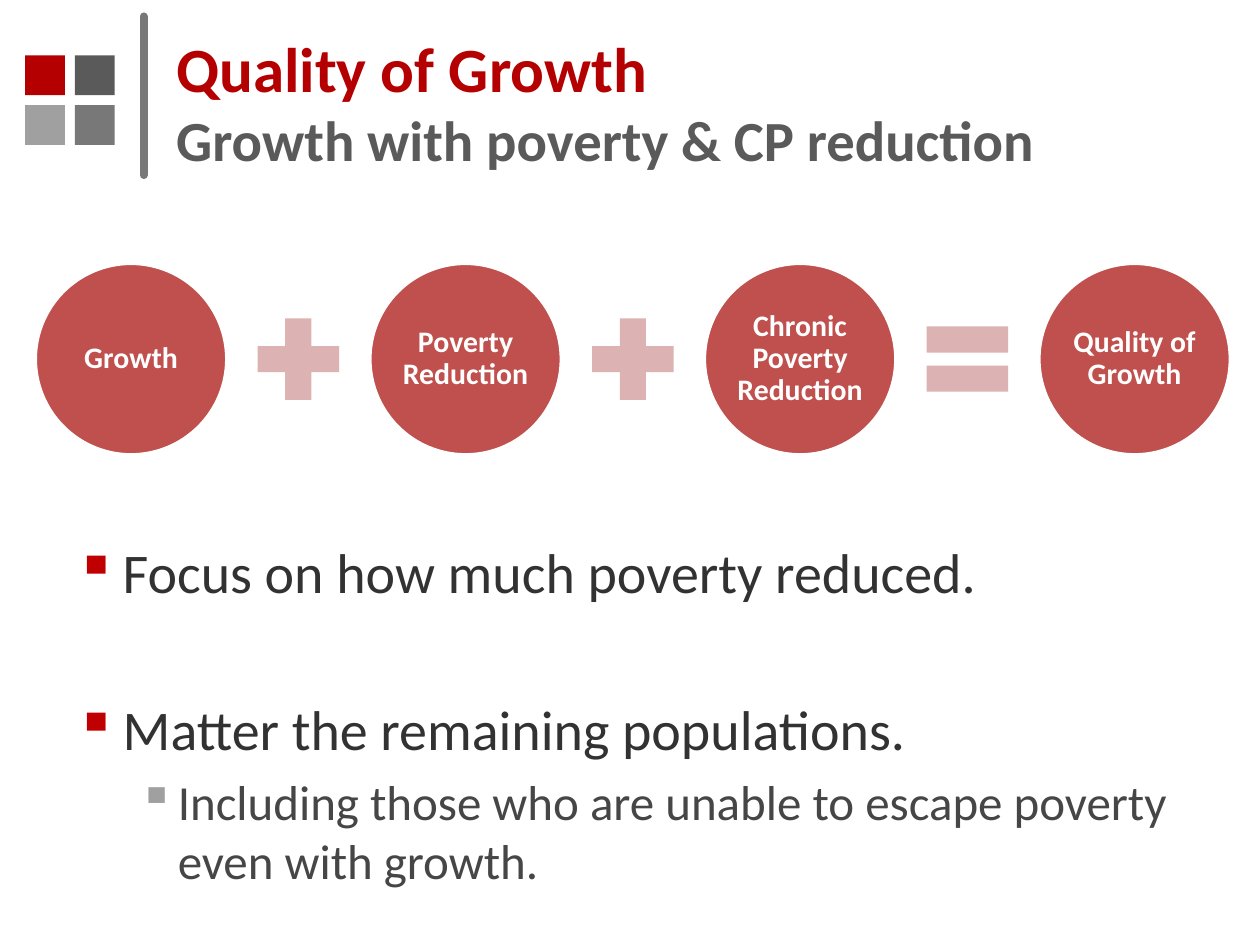
"""Build the Quality of Growth slide on a grid of 100 columns by 75 rows."""
import pptx
import pptx.dml.color
import pptx.enum.shapes
import pptx.enum.text
import pptx.oxml.ns
import pptx.util
import lxml.etree

COLORS = {
    "red": "B40000", "dark": "5A5A5A", "gray": "787878", "light": "A0A0A0",
    "circle": "C0504D", "operator": "DCB3B2", "white": "FFFFFF",
    "bullet": "C00000", "body": "323232", "detail": "464646",
}
SHAPE = pptx.enum.shapes.MSO_SHAPE
MIDDLE = pptx.enum.text.MSO_ANCHOR.MIDDLE
TOP = pptx.enum.text.MSO_ANCHOR.TOP
CENTER = pptx.enum.text.PP_ALIGN.CENTER


class SlideBuilder:
    """Hold the style and the current slide."""

    font = "Calibri"
    columns, rows = 100, 75

    def __init__(self, deck):
        self.column = deck.slide_width / self.columns
        self.row = deck.slide_height / self.rows
        self.page = deck.slides.add_slide(deck.slide_layouts[6])

    def place(self, left, top, width, height):
        return [int(left * self.column), int(top * self.row),
                int(width * self.column), int(height * self.row)]

    def color(self, name):
        return pptx.dml.color.RGBColor.from_string(COLORS[name])

    def shape(self, kind, area, fill, outline=None):
        shape = self.page.shapes.add_shape(kind, *self.place(*area))
        shape.shadow.inherit = False
        shape.fill.solid()
        shape.fill.fore_color.rgb = self.color(fill)
        if outline:
            shape.line.color.rgb = self.color(outline)
            shape.line.width = pptx.util.Pt(2)
        else:
            shape.line.fill.background()
        return shape

    def line(self, start, end, color, width):
        x1, y1, x2, y2 = self.place(*start, *end)
        line = self.page.shapes.add_connector(
            pptx.enum.shapes.MSO_CONNECTOR.STRAIGHT, x1, y1, x2, y2)
        line.line.color.rgb = self.color(color)
        line.line.width = pptx.util.Pt(width)
        line.line._get_or_add_ln().set("cap", "rnd")
        lxml.etree.SubElement(line._element.spPr, pptx.oxml.ns.qn("a:effectLst"))

    def text_box(self, area, anchor):
        box = self.page.shapes.add_textbox(*self.place(*area))
        box.text_frame.word_wrap = True
        box.text_frame.vertical_anchor = anchor
        return box.text_frame

    def span(self, para, text, size, color, bold=False):
        span = para.add_run()
        span.text = text
        span.font.name = self.font
        span.font.size = pptx.util.Pt(size)
        span.font.bold = bold
        span.font.color.rgb = self.color(color)

    def circle(self, area, text):
        frame = self.shape(SHAPE.OVAL, area, "circle", "white").text_frame
        frame.word_wrap = True
        frame.vertical_anchor = MIDDLE
        frame.margin_left = frame.margin_right = pptx.util.Inches(0.02)
        frame.margin_top = frame.margin_bottom = pptx.util.Inches(0.02)
        para = frame.paragraphs[0]
        para.alignment = CENTER
        para.line_spacing = 0.9
        self.span(para, text, 17, "white", True)

    def bullet(self, para, text, size, color, mark, level, margin, indent, before):
        para.level = level
        para.space_before = pptx.util.Pt(before)
        properties = para._p.get_or_add_pPr()
        properties.set("marL", str(int(margin * self.column)))
        properties.set("indent", str(int(-indent * self.column)))
        tint = lxml.etree.SubElement(properties, pptx.oxml.ns.qn("a:buClr"))
        lxml.etree.SubElement(tint, pptx.oxml.ns.qn("a:srgbClr"), val=COLORS[mark])
        lxml.etree.SubElement(properties, pptx.oxml.ns.qn("a:buChar"), char="▪")
        self.span(para, text, size, color)


def main():
    deck = pptx.Presentation()
    deck.slide_width = pptx.util.Inches(10)
    deck.slide_height = pptx.util.Inches(7.5)
    slide = SlideBuilder(deck)

    for index, color in enumerate(["red", "dark", "light", "gray"]):
        row, column = divmod(index, 2)
        slide.shape(SHAPE.RECTANGLE,
                    (2 + 3.95 * column, 4.4 + 3.95 * row, 3.15, 3.15), color)
    slide.line((11.4, 1.3), (11.4, 13.9), "gray", 4.5)

    title = slide.text_box((13, 2.9, 79.6, 10.2), MIDDLE).paragraphs[0]
    slide.span(title, "Quality of Growth", 36, "red", True)
    title.add_line_break()
    slide.span(title, "Growth with poverty & CP reduction", 32.4, "dark", True)

    pitch, diameter, sign, middle = 26.55, 15.2, 8.8, 28.5
    terms = ["Growth", "Poverty Reduction", "Chronic Poverty Reduction",
             "Quality of Growth"]
    signs = [SHAPE.MATH_PLUS, SHAPE.MATH_PLUS, SHAPE.MATH_EQUAL]
    for index, term in enumerate(terms):
        center = 10.4 + pitch * index
        slide.circle((center - diameter / 2, middle - diameter / 2,
                      diameter, diameter), term)
        if index < len(signs):
            slide.shape(signs[index],
                        (center + pitch / 2 - sign / 2, middle - sign / 2, sign, sign),
                        "operator")

    body = slide.text_box((5, 42.2, 90, 29.1), TOP)
    main_style = (32, "body", "bullet", 0, 3.75, 3.75)
    detail_style = (28, "detail", "light", 1, 8.13, 3.13)
    points = [
        ("Focus on how much poverty reduced.", main_style, 0),
        ("Matter the remaining populations.", main_style, 51),
        ("Including those who are unable to escape poverty even with growth.",
         detail_style, 5.6),
    ]
    for index, (text, style, before) in enumerate(points):
        para = body.add_paragraph() if index else body.paragraphs[0]
        slide.bullet(para, text, *style, before)

    deck.save("out.pptx")


if __name__ == "__main__":
    main()
